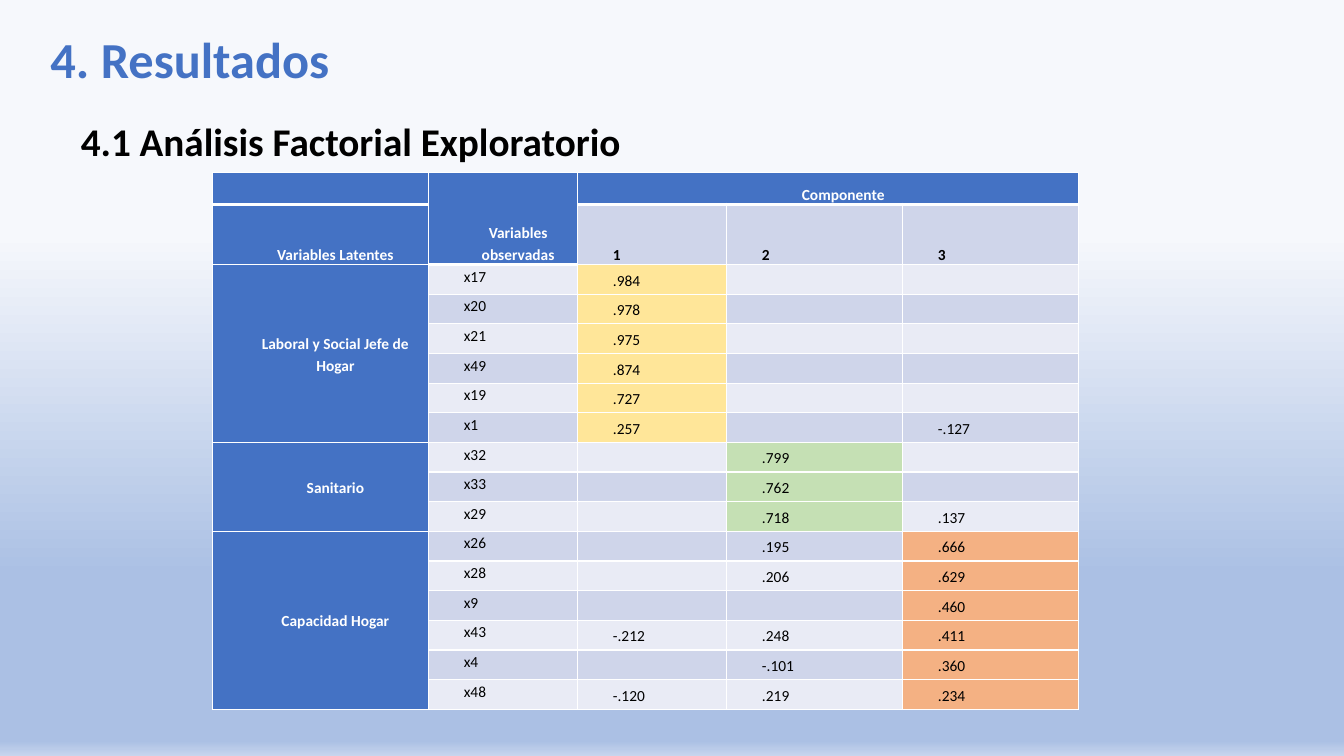
from copy import deepcopy

from lxml.etree import SubElement
from pptx import Presentation
from pptx.dml.color import RGBColor
from pptx.enum.text import MSO_ANCHOR, PP_ALIGN
from pptx.oxml.ns import qn
from pptx.util import Pt

TITLE = "4. Resultados"
SUBTITLE = "4.1 Análisis Factorial Exploratorio"
HEADS = [
    ("", "Variables observadas", "Componente", "", ""),
    ("Variables Latentes", "", "1", "2", "3"),
]
# Each latent variable: name, highlight, rows of (observed, loadings 1 to 3)
GROUPS = [
    ("Laboral y Social Jefe de Hogar", "yellow", [
        ("x17", ".984", "", ""),
        ("x20", ".978", "", ""),
        ("x21", ".975", "", ""),
        ("x49", ".874", "", ""),
        ("x19", ".727", "", ""),
        ("x1", ".257", "", "-.127"),
    ]),
    ("Sanitario", "green", [
        ("x32", "", ".799", ""),
        ("x33", "", ".762", ""),
        ("x29", "", ".718", ".137"),
    ]),
    ("Capacidad Hogar", "orange", [
        ("x26", "", ".195", ".666"),
        ("x28", "", ".206", ".629"),
        ("x9", "", "", ".460"),
        ("x43", "-.212", ".248", ".411"),
        ("x4", "", "-.101", ".360"),
        ("x48", "-.120", ".219", ".234"),
    ]),
]
COLORS = {
    "blue": "4472C4", "white": "FFFFFF", "black": "000000",
    "light": "E9EBF5", "dark": "CFD5EA",
    "yellow": "FFE699", "green": "C5E0B4", "orange": "F4B183",
}
SKY = [(0.31, "F6F8FC"), (0.76, "ABC0E4"), (0.98, "ABC0E4"), (1, "C7D5ED")]
FONT = "Calibri"
WIDTHS = [154.6, 106.5, 106.5, 125.7, 125.7]
HEAD_HEIGHTS = [23, 43]
ROW_HEIGHT = 21.2
INDENT = 21.6


def rgb(name):
    return RGBColor.from_string(COLORS[name])


def style(para, size, color, bold, align, spacing, indent=0):
    para.font.name, para.font.size = FONT, Pt(size)
    para.font.bold, para.font.color.rgb = bold, rgb(color)
    para.alignment, para.line_spacing = align, spacing
    if indent:
        props = para._p.get_or_add_pPr()
        props.set("marL", str(Pt(indent)))
        props.set("indent", "0")


def paint_sky(slide):
    fill = slide.background.fill
    fill.gradient()
    fill.gradient_angle = 270
    stops = slide._element.xpath(".//a:gsLst")[0]
    while len(stops) < len(SKY):
        stops.append(deepcopy(stops[0]))
    for stop, (place, color) in zip(fill.gradient_stops, SKY):
        stop.position = place
        stop.color.rgb = RGBColor.from_string(color)


def add_text(slide, box, text, anchor, **look):
    frame = slide.shapes.add_textbox(*map(Pt, box)).text_frame
    frame.word_wrap = True
    frame.vertical_anchor = anchor
    frame.text = text
    style(frame.paragraphs[0], **look)


def is_thick(row, col):
    """Tell whether the lower edge of a cell is a heavy header rule."""
    return row == 0 or (row, col) == (1, 1)


def draw_edges(cell, row, col):
    props = cell._tc.get_or_add_tcPr()
    weights = {
        "L": 1, "R": 1,
        "T": 3 if row and is_thick(row - 1, col) else 1,
        "B": 3 if is_thick(row, col) else 1,
    }
    for place, (side, weight) in enumerate(weights.items()):
        line = SubElement(props, qn("a:ln" + side), w=str(Pt(weight)))
        fill = SubElement(line, qn("a:solidFill"))
        SubElement(fill, qn("a:srgbClr"), val=COLORS["white"])
        props.insert(place, line)


def fill_cell(cell, row, col, text, fill, head):
    """Write one cell; head marks white bold text on blue."""
    cell.fill.solid()
    cell.fill.fore_color.rgb = rgb(fill)
    cell.margin_left = cell.margin_right = Pt(3.6)
    cell.margin_top = cell.margin_bottom = 0
    if row < len(HEADS):
        cell.vertical_anchor = MSO_ANCHOR.BOTTOM
    else:
        cell.vertical_anchor = MSO_ANCHOR.TOP if col == 1 else MSO_ANCHOR.MIDDLE
    para = cell.text_frame.paragraphs[0]
    if text:
        para.text = text
    else:
        para._p.get_or_add_endParaRPr().set("sz", "1100")
    style(para, 11, "white" if head else "black", row < len(HEADS) or head,
          PP_ALIGN.CENTER if head else PP_ALIGN.JUSTIFY, 1.15, INDENT)
    draw_edges(cell, row, col)


def add_loadings(slide):
    heights = HEAD_HEIGHTS + [ROW_HEIGHT] * sum(len(g[2]) for g in GROUPS)
    table = slide.shapes.add_table(
        len(heights), len(WIDTHS), Pt(151.5), Pt(123),
        Pt(sum(WIDTHS)), Pt(sum(heights))).table
    table.first_row = table.horz_banding = False
    for column, width in zip(table.columns, WIDTHS):
        column.width = Pt(width)
    for line, height in zip(table.rows, heights):
        line.height = Pt(height)

    for row, texts in enumerate(HEADS):
        for col, text in enumerate(texts):
            head = row == 0 or col < 2
            fill_cell(table.cell(row, col), row, col, text,
                      "blue" if head else "dark", head)
    table.cell(0, 1).merge(table.cell(1, 1))
    table.cell(0, 2).merge(table.cell(0, 4))

    row = len(HEADS)
    for factor, (name, mark, lines) in enumerate(GROUPS):
        first = row
        for values in lines:
            band = "dark" if row % 2 else "light"
            label = name if row == first else ""
            fill_cell(table.cell(row, 0), row, 0, label, "blue", True)
            for col, text in enumerate(values, 1):
                fill = mark if col == factor + 2 else band
                fill_cell(table.cell(row, col), row, col, text, fill, False)
            row += 1
        table.cell(first, 0).merge(table.cell(row - 1, 0))


def main():
    deck = Presentation()
    deck.slide_width, deck.slide_height = Pt(960), Pt(540)
    slide = deck.slides.add_slide(deck.slide_layouts[6])
    paint_sky(slide)
    add_text(slide, (29, 14, 828, 61), TITLE, MSO_ANCHOR.MIDDLE, size=36,
             color="blue", bold=True, align=PP_ALIGN.LEFT, spacing=0.9)
    add_text(slide, (29, 75, 901, 93), SUBTITLE, MSO_ANCHOR.TOP, size=28,
             color="black", bold=True, align=PP_ALIGN.JUSTIFY, spacing=1.15,
             indent=INDENT)
    add_loadings(slide)
    deck.save("out.pptx")


if __name__ == "__main__":
    main()
